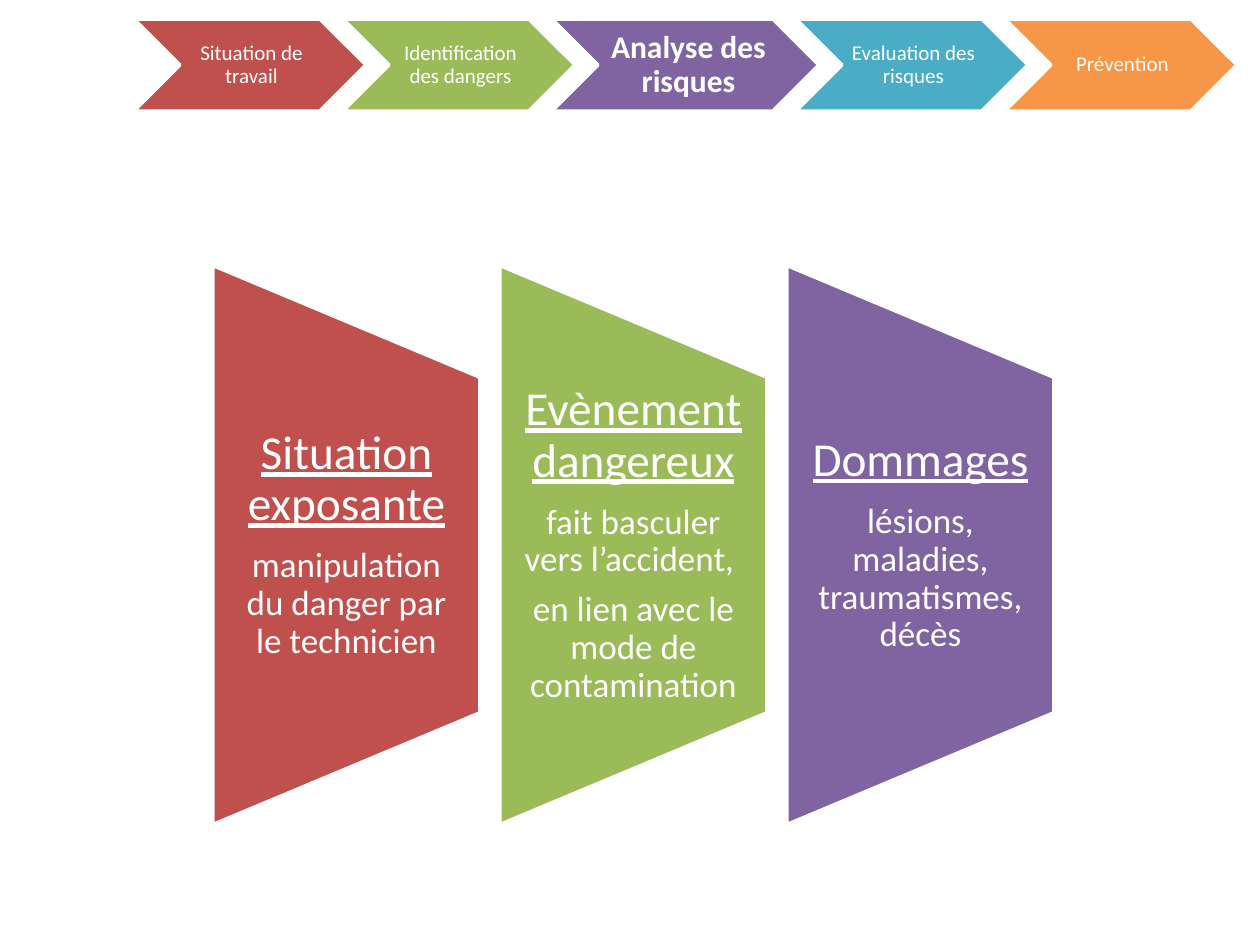
"""Build the risk analysis slide: a chevron process above three trapezoid panels."""
from pptx import Presentation
from pptx.dml.color import RGBColor
from pptx.enum.shapes import MSO_SHAPE
from pptx.enum.text import MSO_ANCHOR, PP_ALIGN
from pptx.util import Emu, Pt

PX = 914400 // 126
COLORS = {
    "red": "C0504D",
    "green": "9BBB59",
    "purple": "8064A2",
    "blue": "4BACC6",
    "orange": "F79646",
    "white": "FFFFFF",
}
STEPS = [
    ("Situation de travail", "red"),
    ("Identification des dangers", "green"),
    ("Analyse des risques", "purple"),
    ("Evaluation des risques", "blue"),
    ("Prévention", "orange"),
]
CURRENT_STEP = "Analyse des risques"
PANELS = [
    ("Situation exposante", ["manipulation du danger par le technicien"], "red"),
    (
        "Evènement dangereux",
        ["fait basculer vers l’accident, ", "en lien avec le mode de contamination"],
        "green",
    ),
    ("Dommages", ["lésions, maladies, traumatismes, décès"], "purple"),
]

STEP_LEFT, STEP_TOP, STEP_HEIGHT, STEP_OVERLAP = 134, 19, 92, 23
STEP_WIDTH, CURRENT_WIDTH = 232, 267
PANEL_LEFT, PANEL_WIDTH, PANEL_HEIGHT, PANEL_PITCH = 213, 267, 559, 287
PANEL_MIDDLE, PANEL_TEXT_HEIGHT = 545, 336


def rgb(name):
    return RGBColor.from_string(COLORS[name])


def scaled(*lengths):
    return [Emu(round(length * PX)) for length in lengths]


def add_block(slide, preset, box, color, rotation=0):
    block = slide.shapes.add_shape(preset, *scaled(*box))
    block.rotation = rotation
    block.shadow.inherit = False
    block.fill.solid()
    block.fill.fore_color.rgb = rgb(color)
    block.line.color.rgb = rgb("white")
    block.line.width = Pt(2)


def add_label(slide, box, insets, lines):
    frame = slide.shapes.add_textbox(*scaled(*box)).text_frame
    frame.word_wrap = True
    frame.vertical_anchor = MSO_ANCHOR.MIDDLE
    (frame.margin_left, frame.margin_top,
     frame.margin_right, frame.margin_bottom) = scaled(*insets)
    frame.text = "\n".join(text for text, *_ in lines)
    for paragraph, (_, size, bold, underline) in zip(frame.paragraphs, lines):
        paragraph.alignment = PP_ALIGN.CENTER
        paragraph.line_spacing = 0.9
        paragraph.space_after = Pt(size * 0.35)
        font = paragraph.runs[0].font
        font.name = "Calibri"
        font.size = Pt(size)
        font.bold = bold
        font.underline = underline
        font.color.rgb = rgb("white")


def add_panels(slide):
    for index, (title, details, color) in enumerate(PANELS):
        left = PANEL_LEFT + index * PANEL_PITCH
        center = left + PANEL_WIDTH / 2
        trapezoid = (center - PANEL_HEIGHT / 2, PANEL_MIDDLE - PANEL_WIDTH / 2,
                     PANEL_HEIGHT, PANEL_WIDTH)
        add_block(slide, MSO_SHAPE.FLOWCHART_MANUAL_OPERATION, trapezoid, color, 270)
        lines = [(title, 27, False, True)]
        lines += [(detail, 20, False, False) for detail in details]
        label = (left, PANEL_MIDDLE - PANEL_TEXT_HEIGHT / 2,
                 PANEL_WIDTH, PANEL_TEXT_HEIGHT)
        add_label(slide, label, (24, 0, 24, 0), lines)


def add_steps(slide):
    left = STEP_LEFT
    for title, color in STEPS:
        current = title == CURRENT_STEP
        width = CURRENT_WIDTH if current else STEP_WIDTH
        size = 18 if current else 12
        insets = (10, 4, 4, 4) if current else (6, 3, 3, 3)
        add_block(slide, MSO_SHAPE.CHEVRON, (left, STEP_TOP, width, STEP_HEIGHT), color)
        label = (left + STEP_HEIGHT / 2, STEP_TOP, width - STEP_HEIGHT, STEP_HEIGHT)
        add_label(slide, label, insets, [(title, size, current, False)])
        left += width - STEP_OVERLAP


def main():
    deck = Presentation()
    deck.slide_width, deck.slide_height = scaled(1260, 945)
    slide = deck.slides.add_slide(deck.slide_layouts[6])
    add_panels(slide)
    add_steps(slide)
    deck.save("out.pptx")


if __name__ == "__main__":
    main()
